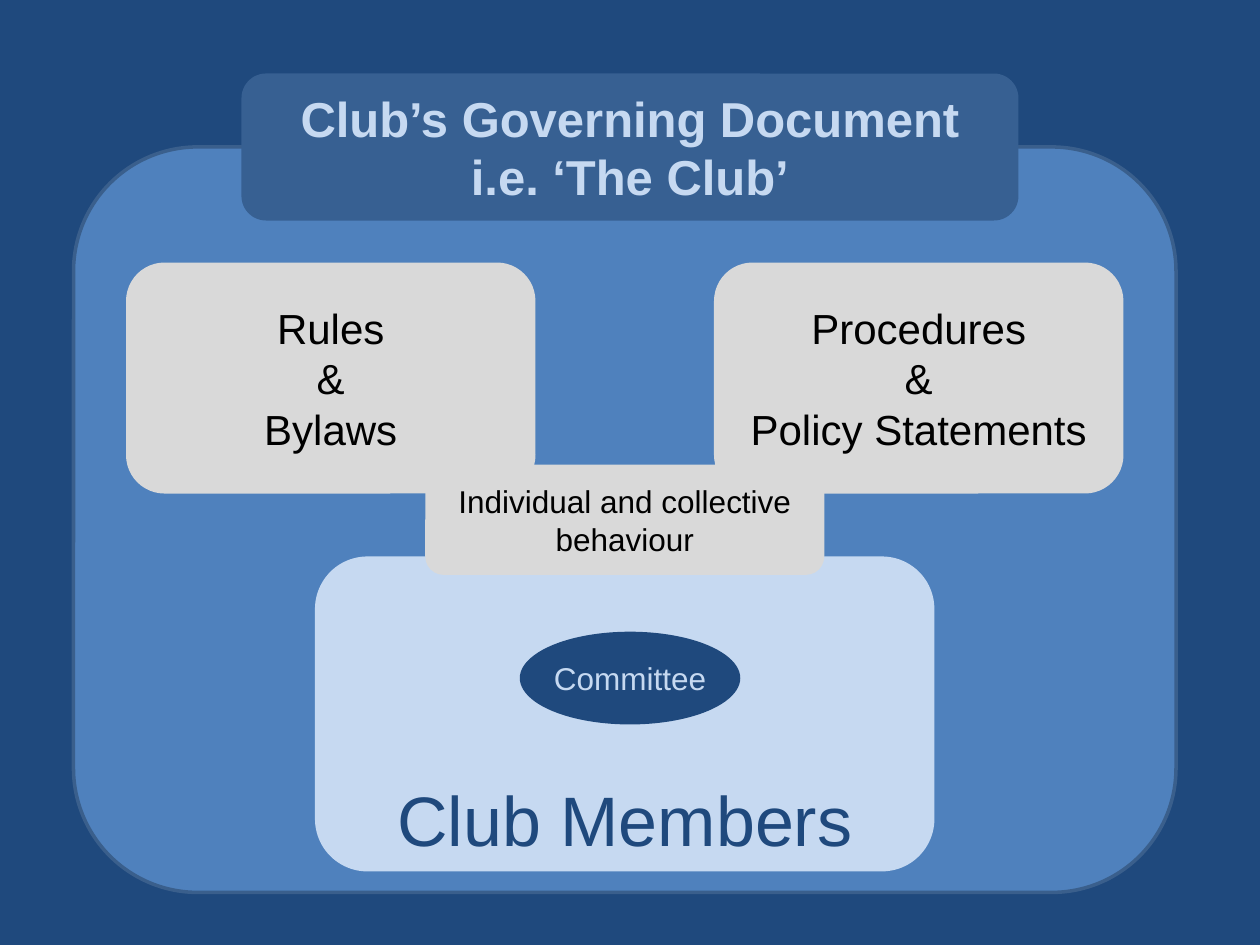
from pptx import Presentation
from pptx.dml.color import RGBColor
from pptx.enum.shapes import MSO_SHAPE
from pptx.enum.text import MSO_ANCHOR, MSO_AUTO_SIZE, PP_ALIGN
from pptx.util import Pt

ROUNDED = MSO_SHAPE.ROUNDED_RECTANGLE
OVAL = MSO_SHAPE.OVAL
MIDDLE, TOP = MSO_ANCHOR.MIDDLE, MSO_ANCHOR.TOP
CENTER = PP_ALIGN.CENTER
NO_FIT = MSO_AUTO_SIZE.NONE
TITLE_ONLY = 5

FONT = "Arial"
NAVY, BLUE, STEEL, OUTLINE = "1F497D", "4F81BD", "376092", "3A5F8C"
PALE, GREY, BLACK = "C6D9F1", "D9D9D9", "000000"


def rgb(color):
    return RGBColor.from_string(color)


def write(shape, text, size, color, bold=False, anchor=MIDDLE):
    """Fill a shape with centred text, one paragraph per line."""
    tf = shape.text_frame
    tf.text = text
    tf.word_wrap = True
    tf.auto_size = NO_FIT
    tf.vertical_anchor = anchor
    for p in tf.paragraphs:
        p.alignment = CENTER
        for r in p.runs:
            r.font.name = FONT
            r.font.size = Pt(size)
            r.font.bold = bold
            r.font.color.rgb = rgb(color)


def add_panel(s, box, fill, kind=ROUNDED, line=None):
    sp = s.shapes.add_shape(kind, *map(Pt, box))
    sp.shadow.inherit = False
    sp.fill.solid()
    sp.fill.fore_color.rgb = rgb(fill)
    if line:
        sp.line.color.rgb = rgb(line)
        sp.line.width = Pt(2)
    else:
        sp.line.fill.background()
    return sp


def add_label(s, box, text, size, color):
    sp = s.shapes.add_textbox(*map(Pt, box))
    write(sp, text, size, color, anchor=TOP)


def add_title(s, box, text):
    """Place the title on its panel, in front of the shapes drawn so far."""
    add_panel(s, box, STEEL)
    title = s.shapes.title
    title.left, title.top, title.width, title.height = map(Pt, box)
    write(title, text, 28, PALE, bold=True)
    title.element.getparent().append(title.element)


def main():
    prs = Presentation()
    prs.slide_width, prs.slide_height = Pt(720), Pt(540)
    s = prs.slides.add_slide(prs.slide_layouts[TITLE_ONLY])
    s.background.fill.solid()
    s.background.fill.fore_color.rgb = rgb(NAVY)

    add_panel(s, (42, 84, 630, 426), BLUE, line=OUTLINE)
    add_title(s, (138, 42, 444, 84),
              "Club’s Governing Document\ni.e. ‘The Club’")

    add_panel(s, (180, 318, 354, 180), PALE)
    add_label(s, (207, 440, 300, 55), "Club Members", 40, NAVY)

    for left, text in ((408, "Procedures\n&\nPolicy Statements"),
                       (72, "Rules\n&\nBylaws")):
        write(add_panel(s, (left, 150, 234, 132), GREY), text, 24, BLACK)
    write(add_panel(s, (243, 265.5, 228, 63), GREY),
          "Individual and collective\nbehaviour", 18, BLACK)

    add_panel(s, (297, 361, 126, 53), NAVY, kind=OVAL)
    add_label(s, (282, 373, 156, 29), "Committee", 18, PALE)

    prs.save("out.pptx")


if __name__ == "__main__":
    main()
